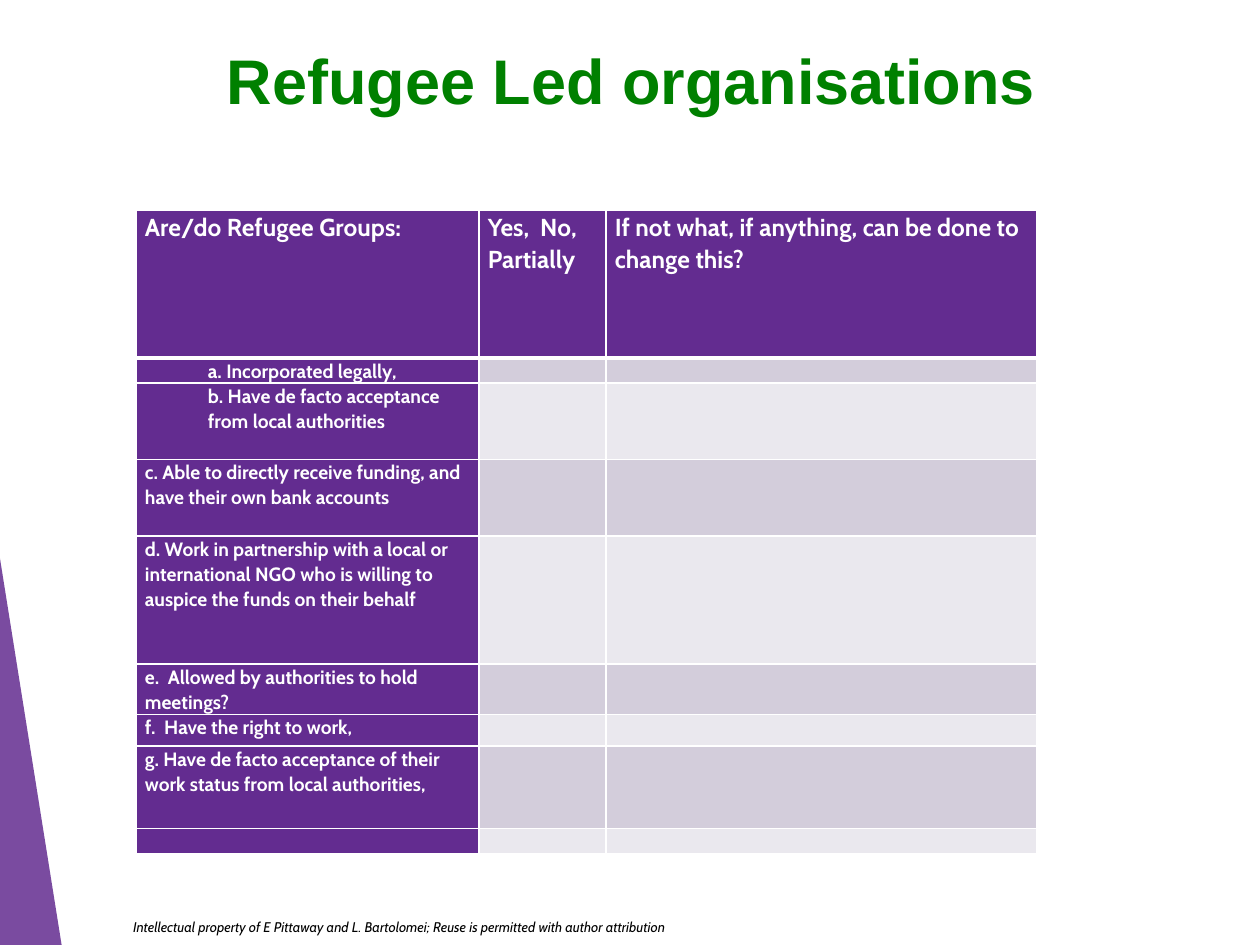
from lxml import etree
from pptx import Presentation
from pptx import util as u
from pptx.dml.color import RGBColor
from pptx.enum import text
from pptx.oxml import ns

COLORS = {
    "purple": "632C90",
    "green": "008000",
    "white": "FFFFFF",
    "black": "000000",
    "odd": "D3CDDB",
    "even": "EAE8EE",
}
COLUMN_WIDTHS = [196, 72.6, 246]
ROW_HEIGHTS = [84.4, 14.4, 43.6, 43.6, 73.4, 28.8, 18, 47, 14.4]
HEADINGS = [
    "Are/do Refugee Groups:",
    "Yes,  No, Partially",
    "If not what, if anything, can be done to  change this?",
]
QUESTIONS = [
    "a. Incorporated legally,",
    "b. Have de facto acceptance from local authorities",
    "c. Able to directly receive funding, and have their own bank accounts",
    "d. Work in partnership with a local or international NGO who is willing to auspice the funds on their behalf",
    "e.  Allowed by authorities to hold meetings?",
    "f.  Have the right to work,",
    "g. Have de facto acceptance of their work status from local authorities,",
    "",
]
INDENTED_ROWS = (1, 2)


class SlideBuilder:
    font_name = "Cabin"

    def __init__(self, presentation):
        self.slide = presentation.slides.add_slide(presentation.slide_layouts[5])

    def color(self, name):
        return RGBColor.from_string(COLORS[name])

    def style(self, paragraph, size, color, bold=False, italic=False, name=None):
        font = paragraph.font
        font.name = name or self.font_name
        font.size = u.Pt(size)
        font.bold = bold
        font.italic = italic
        font.color.rgb = self.color(color)

    def title(self, content, left, top, width, height):
        shape = self.slide.shapes.title
        shape.left, shape.top = u.Pt(left), u.Pt(top)
        shape.width, shape.height = u.Pt(width), u.Pt(height)
        frame = shape.text_frame
        frame.text = content
        frame.vertical_anchor = text.MSO_ANCHOR.BOTTOM
        frame.margin_top, frame.margin_bottom = u.Pt(0), u.Pt(2)
        paragraph = frame.paragraphs[0]
        paragraph.alignment = text.PP_ALIGN.CENTER
        self.style(paragraph, 36, "green", bold=True, name="Arial")

    def polygon(self, points, color, opacity):
        start, *others = [(u.Pt(x), u.Pt(y)) for x, y in points]
        builder = self.slide.shapes.build_freeform(*start)
        builder.add_line_segments(others, close=True)
        shape = builder.convert_to_shape()
        shape.shadow.inherit = False
        shape.fill.solid()
        shape.fill.fore_color.rgb = self.color(color)
        shape.line.fill.background()
        fill = shape.fill._xPr.find(ns.qn("a:solidFill"))
        etree.SubElement(fill[0], ns.qn("a:alpha"), val=str(opacity * 1000))

    def caption(self, content, left, top, width, height):
        box = self.slide.shapes.add_textbox(
            u.Pt(left), u.Pt(top), u.Pt(width), u.Pt(height))
        box.text_frame.word_wrap = True
        box.text_frame.text = content
        self.style(box.text_frame.paragraphs[0], 8, "black", italic=True)

    def borders(self, cell, widths):
        properties = cell._tc.get_or_add_tcPr()
        for index, (side, width) in enumerate(zip("LRTB", widths)):
            line = etree.Element(ns.qn(f"a:ln{side}"), w=str(u.Pt(width)))
            fill = etree.SubElement(line, ns.qn("a:solidFill"))
            etree.SubElement(fill, ns.qn("a:srgbClr"), val=COLORS["white"])
            properties.insert(index, line)

    def cell(self, cell, content, size, fill, indent=0):
        cell.fill.solid()
        cell.fill.fore_color.rgb = self.color(fill)
        cell.margin_left = cell.margin_right = u.Pt(5.2)
        cell.margin_top = cell.margin_bottom = 0
        cell.text = content
        paragraph = cell.text_frame.paragraphs[0]
        paragraph.line_spacing = 1.07
        paragraph.space_after = u.Pt(8)
        if indent:
            properties = paragraph._p.get_or_add_pPr()
            properties.set("marL", str(u.Pt(indent)))
            properties.set("indent", "0")
        self.style(paragraph, size, "white", bold=True)

    def table(self, rows, left, top):
        table = self.slide.shapes.add_table(
            len(rows), len(COLUMN_WIDTHS), u.Pt(left), u.Pt(top),
            u.Pt(sum(COLUMN_WIDTHS)), u.Pt(sum(ROW_HEIGHTS))).table
        for column, width in zip(table.columns, COLUMN_WIDTHS):
            column.width = u.Pt(width)
        for row, height in zip(table.rows, ROW_HEIGHTS):
            row.height = u.Pt(height)
        for r, contents in enumerate(rows):
            for c, content in enumerate(contents):
                cell = table.cell(r, c)
                band = "odd" if r % 2 else "even"
                fill = "purple" if r == 0 or c == 0 else band
                size = 14 if r == 0 else 11 if content else 8
                indent = 36 if r in INDENTED_ROWS and c == 0 else 0
                self.cell(cell, content, size, fill, indent)
                self.borders(cell, (1, 1, 3 if r == 1 else 1, 3 if r == 0 else 1))


def main():
    presentation = Presentation()
    presentation.slide_width, presentation.slide_height = u.Pt(720), u.Pt(540)
    builder = SlideBuilder(presentation)
    builder.polygon([(-0.5, 316), (35.3, 540.5), (-0.5, 540)], "purple", 85)
    builder.caption(
        "Intellectual property of E Pittaway and L. Bartolomei; "
        "Reuse is permitted with author attribution", 69, 521.5, 418, 17)
    builder.title("Refugee Led organisations", 54, 19.5, 613.5, 49.5)
    rows = [HEADINGS] + [[question, "", ""] for question in QUESTIONS]
    builder.table(rows, 77.6, 120.2)
    presentation.save("out.pptx")


if __name__ == "__main__":
    main()
